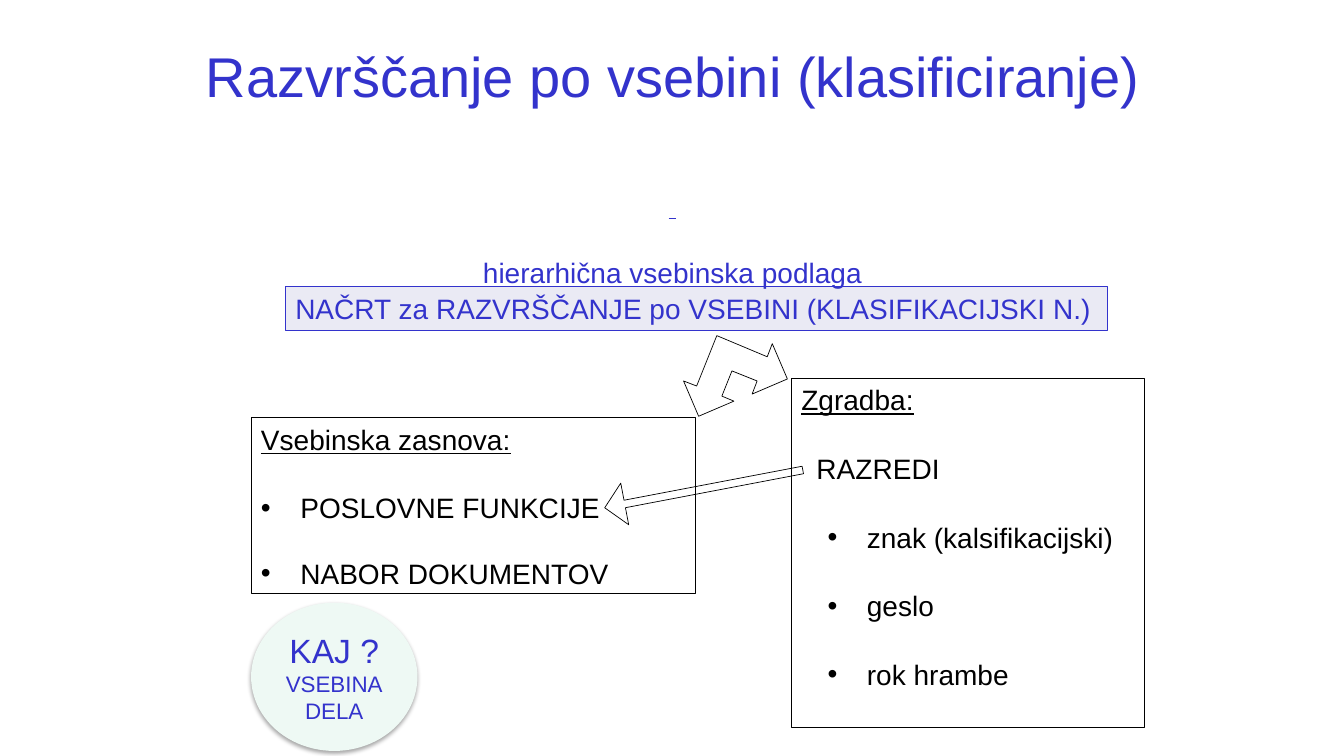
from lxml import etree
from pptx import Presentation
from pptx.dml.color import RGBColor
from pptx.enum.shapes import MSO_SHAPE
from pptx.enum.text import MSO_ANCHOR, PP_ALIGN
from pptx.oxml.ns import qn
from pptx.util import Inches, Pt

RECT, OVAL, ARROW = MSO_SHAPE.RECTANGLE, MSO_SHAPE.OVAL, MSO_SHAPE.RIGHT_ARROW
LEFT, MID = PP_ALIGN.LEFT, PP_ALIGN.CENTER
TOP, CENTER = MSO_ANCHOR.TOP, MSO_ANCHOR.MIDDLE
BLUE, BLACK, NAVY, MINT = "3333CC", "000000", "333399", "EEF9F4"
GAP = 25  # points between list entries
HANG = 0.39  # inches from bullet to text


def color(code):
    return RGBColor.from_string(code)


def child(parent, tag, **values):
    node = etree.SubElement(parent, qn(tag))
    for key, value in values.items():
        node.set(key, str(value))
    return node


def style(shape, fill=None, line=None, width=0.5):
    shape.shadow.inherit = False
    if fill:
        shape.fill.solid()
        shape.fill.fore_color.rgb = color(fill)
    else:
        shape.fill.background()
    if line:
        shape.line.color.rgb = color(line)
        shape.line.width = Pt(width)
    else:
        shape.line.fill.background()


def put(slide, kind, box, **look):
    shape = slide.shapes.add_shape(kind, *map(Inches, box))
    style(shape, **look)
    return shape


def label(slide, box):
    return slide.shapes.add_textbox(*map(Inches, box))


def write(shape, rows, ink, align=LEFT, anchor=TOP, wrap=True):
    """Fill a shape with rows of (text, format values)."""
    frame = shape.text_frame
    frame.word_wrap, frame.vertical_anchor = wrap, anchor
    for i, (text, form) in enumerate(rows):
        para = frame.add_paragraph() if i else frame.paragraphs[0]
        para.alignment = align
        para.space_before = Pt(form.get("gap", 0))
        props = para._p.get_or_add_pPr()
        left = form.get("left", 0)
        if form.get("bullet"):
            props.set("marL", str(Inches(left + HANG)))
            props.set("indent", str(-Inches(HANG)))
            child(props, "a:buFont", typeface="Arial")
            child(props, "a:buChar", char="•")
        else:
            props.set("marL", str(Inches(left)))
        run = para.add_run()
        run.text = text
        font = {"name": "Arial", "size": Pt(form.get("size", 20)),
                "underline": form.get("under", False)}
        for key, value in font.items():
            setattr(run.font, key, value)
        run.font.color.rgb = color(ink)


def title(slide, box):
    write(label(slide, box), [("Razvrščanje po vsebini (klasificiranje)", {"size": 40})],
          BLUE, MID, CENTER)


def basis(slide, box):
    """Caption above the shaded plan bar."""
    x, y, w, h = box
    write(label(slide, (x + 0.61, y - 1.03, 6.46, 1.1)),
          [(" ", {"under": True}), ("hierarhična vsebinska podlaga", {"gap": GAP})],
          BLUE, MID)
    bar = put(slide, RECT, box, fill=NAVY, line=BLUE, width=0.75)
    tint = bar._element.spPr.find(qn("a:solidFill"))[0]
    child(tint, "a:alpha", val=10000)
    write(bar, [("NAČRT za RAZVRŠČANJE po VSEBINI (KLASIFIKACIJSKI N.)", {})], BLUE)


def panel(slide, box, head, rows):
    write(put(slide, RECT, box, line=BLACK), [(head, {"under": True}), *rows], BLACK)


def fork(slide, box):
    """Two-headed bent arrow, its corners as hundredths of an inch from the box corner."""
    x, y = box
    marks = [(15, 80), (50, 65), (38, 60), (48, 35), (73, 45), (68, 58),
             (103, 43), (88, 8), (83, 21), (33, 0), (13, 50), (0, 45)]
    spots = [(Inches(x + a / 100), Inches(y + b / 100)) for a, b in marks]
    path = slide.shapes.build_freeform(*spots[0])
    path.add_line_segments(spots[1:], close=True)
    style(path.convert_to_shape(), line=BLACK)


def link(slide, box):
    arrow = put(slide, ARROW, box, line=BLACK)
    arrow.adjustments[0], arrow.adjustments[1] = 0.18, 0.48
    arrow.rotation = 169.2


def badge(slide, box):
    oval = put(slide, OVAL, box, fill=MINT)
    glow = oval._element.spPr.find(qn("a:effectLst"))
    shade = child(glow, "a:outerShdw", blurRad=Pt(3.1), dist=Pt(1.8),
                  dir=90 * 60000, rotWithShape=0)
    child(child(shade, "a:srgbClr", val=BLACK), "a:alpha", val=35000)
    write(oval, [("KAJ ?", {"size": 24}), ("VSEBINA", {"size": 16}), ("DELA", {"size": 16})],
          BLUE, MID, CENTER, wrap=False)


def main():
    deck = Presentation()
    deck.slide_width, deck.slide_height = Inches(13.33), Inches(7.5)
    slide = deck.slides.add_slide(deck.slide_layouts[6])
    item = {"bullet": True, "gap": GAP}
    sub = {**item, "left": 0.26}
    basis(slide, (2.83, 2.84, 8.15, 0.44))
    panel(slide, (2.49, 4.14, 4.41, 1.75), "Vsebinska zasnova:",
          [("POSLOVNE FUNKCIJE", item), ("NABOR DOKUMENTOV", {**item, "gap": 22.7})])
    panel(slide, (7.85, 3.75, 3.5, 3.47), "Zgradba:",
          [("RAZREDI", {"left": 0.15, "gap": GAP}),
           *((text, sub) for text in ("znak (kalsifikacijski)", "geslo", "rok hrambe"))])
    fork(slide, (6.78, 3.33))
    badge(slide, (2.49, 5.98, 1.65, 1.47))
    link(slide, (5.98, 4.64, 2, 0.42))
    title(slide, (1.67, -0.03, 10, 1.55))
    deck.save("out.pptx")


if __name__ == "__main__":
    main()
